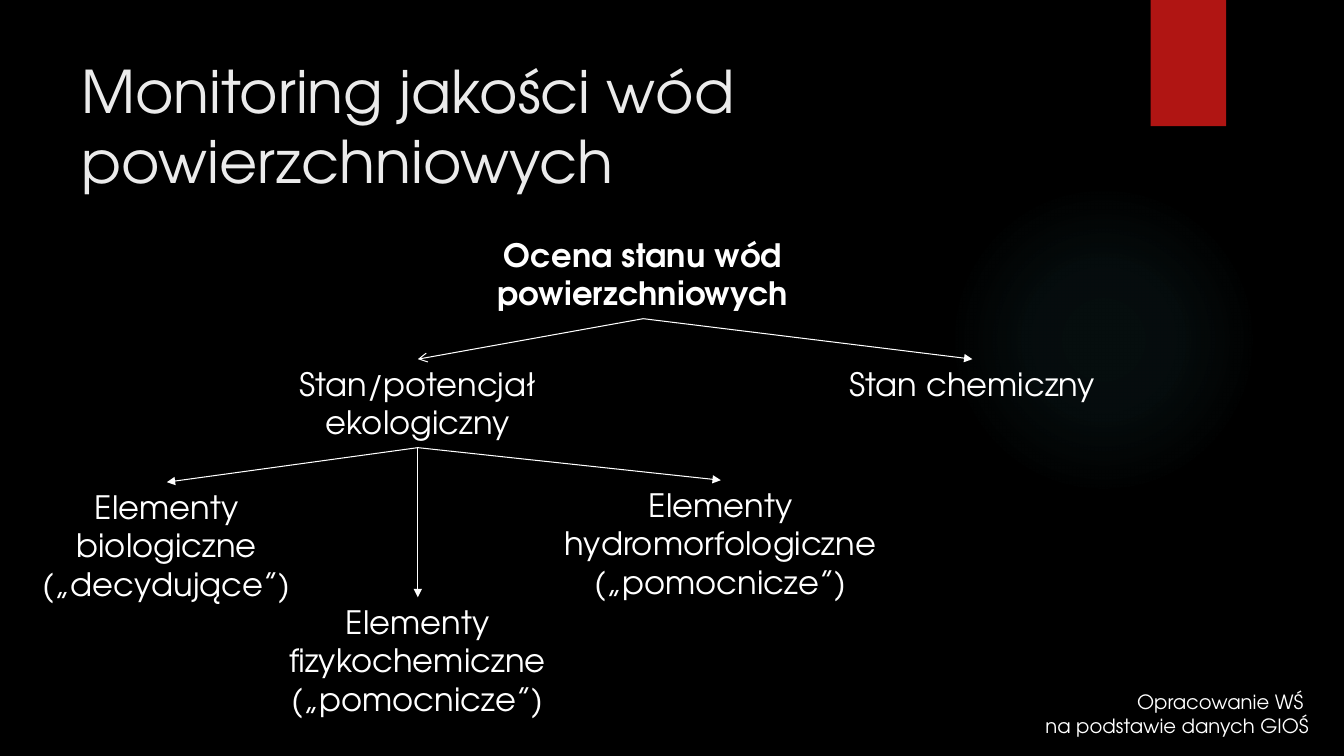
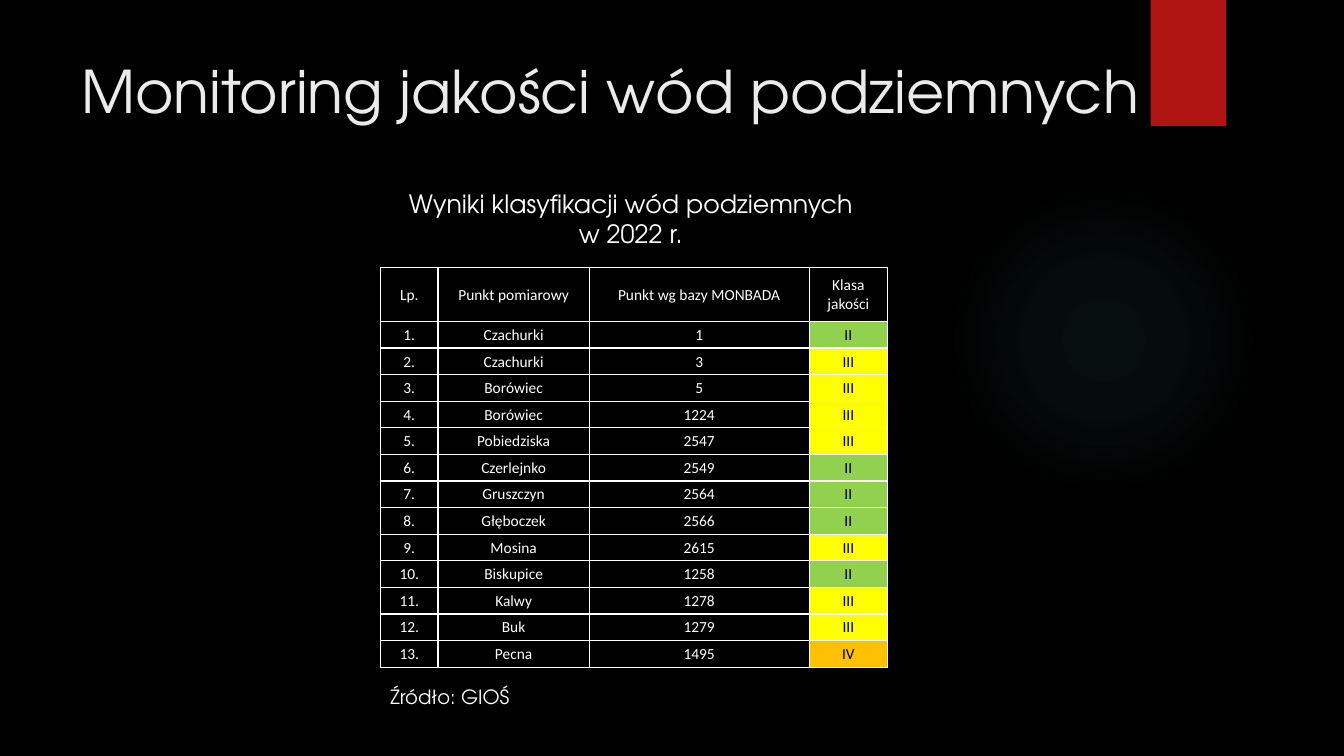
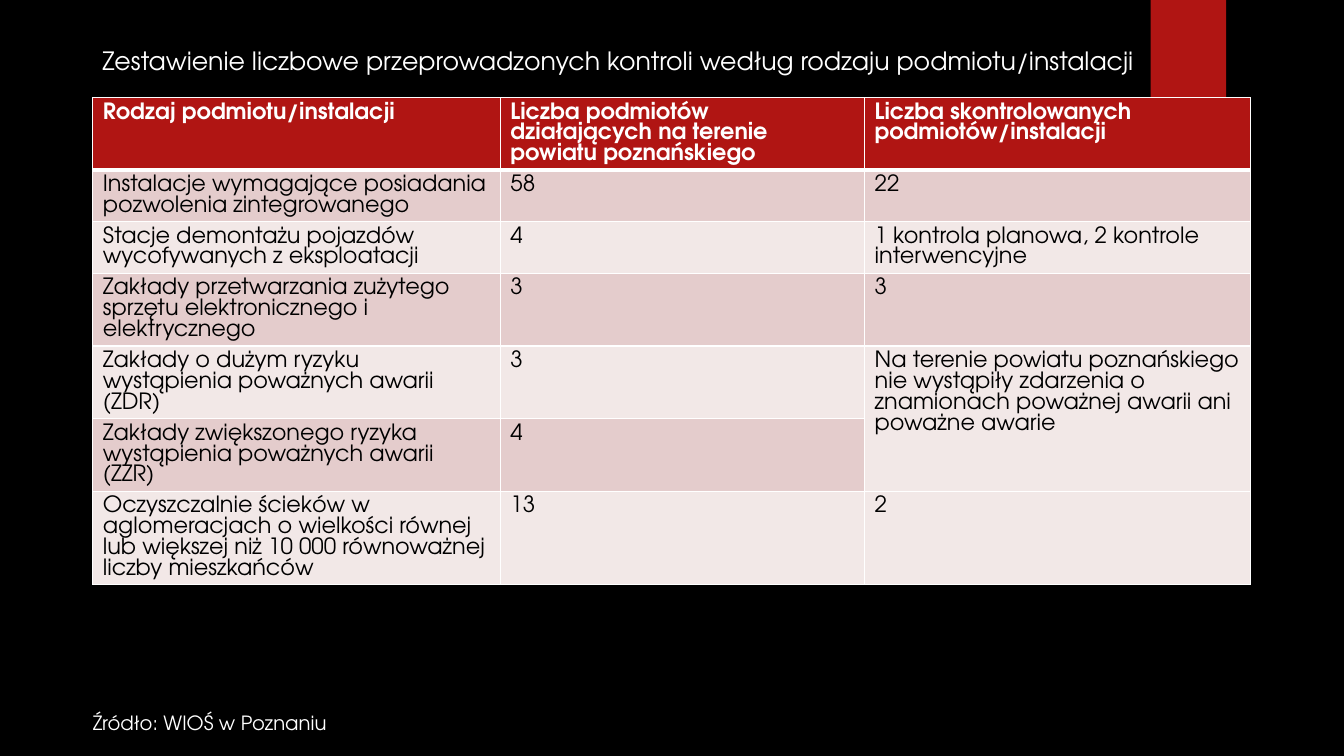
"""Build three slides on water quality monitoring and inspections."""
from dataclasses import dataclass

import pptx
import pptx.dml.color
import pptx.enum.shapes
import pptx.enum.text
import pptx.oxml
import pptx.oxml.ns
import pptx.util
from pptx.util import Cm

ALIGN = pptx.enum.text.PP_ALIGN
SHAPE = pptx.enum.shapes.MSO_SHAPE


@dataclass(frozen=True)
class Theme:
    """Colours, fonts and type sizes of the deck."""

    background: str = "000000"
    text: str = "FFFFFF"
    dark_text: str = "000000"
    title: str = "EBEBEB"
    accent: str = "B01513"
    glow: str = "50B9C1"
    bands: tuple = ("E4CCCC", "F2E8E7")
    good: str = "92D050"
    fair: str = "FFFF00"
    poor: str = "FFC000"
    font: str = "TeX Gyre Adventor"
    table_font: str = "Calibri"
    title_size: int = 42
    node_size: int = 23
    caption_size: int = 18
    table_size: int = 16
    note_size: int = 14
    small_size: int = 11


THEME = Theme()
CLASS_FILLS = {"II": THEME.good, "III": THEME.fair, "IV": THEME.poor}

GROUNDWATER_HEADER = ("Lp.", "Punkt pomiarowy", "Punkt wg bazy MONBADA", "Klasa jakości")
GROUNDWATER_POINTS = [
    ("Czachurki", "1", "II"),
    ("Czachurki", "3", "III"),
    ("Borówiec", "5", "III"),
    ("Borówiec", "1224", "III"),
    ("Pobiedziska", "2547", "III"),
    ("Czerlejnko", "2549", "II"),
    ("Gruszczyn", "2564", "II"),
    ("Głęboczek", "2566", "II"),
    ("Mosina", "2615", "III"),
    ("Biskupice", "1258", "II"),
    ("Kalwy", "1278", "III"),
    ("Buk", "1279", "III"),
    ("Pecna", "1495", "IV"),
]

INSPECTION_ROWS = [
    ("Rodzaj podmiotu/instalacji",
     "Liczba podmiotów działających na terenie powiatu poznańskiego",
     "Liczba skontrolowanych podmiotów/instalacji"),
    ("Instalacje wymagające posiadania pozwolenia zintegrowanego", "58", "22"),
    ("Stacje demontażu pojazdów wycofywanych z eksploatacji", "4",
     "1 kontrola planowa, 2 kontrole interwencyjne"),
    ("Zakłady przetwarzania zużytego sprzętu elektronicznego i elektrycznego", "3", "3"),
    ("Zakłady o dużym ryzyku wystąpienia poważnych awarii (ZDR)", "3",
     "Na terenie powiatu poznańskiego nie wystąpiły zdarzenia o znamionach "
     "poważnej awarii ani poważne awarie"),
    ("Zakłady zwiększonego ryzyka wystąpienia poważnych awarii (ZZR)", "4", ""),
    ("Oczyszczalnie ścieków w aglomeracjach o wielkości równej lub większej niż "
     "10 000 równoważnej liczby mieszkańców", "13", "2"),
]
INSPECTION_LINES = (3, 2, 2, 3, 3, 3, 4)


def rgb(colour):
    """Return a colour object for a hex string."""
    return pptx.dml.color.RGBColor.from_string(colour)


def xml(tag, body):
    """Return a drawing element with the given opening tag and content."""
    name = tag.split()[0]
    return pptx.oxml.parse_xml(f"<a:{tag} {pptx.oxml.ns.nsdecls('a')}>{body}</a:{name}>")


def style_font(font, size, colour, name=THEME.font, bold=False):
    """Set the look of a font."""
    font.name, font.size, font.bold = name, pptx.util.Pt(size), bold
    font.color.rgb = rgb(colour)


def add_plain_shape(page, kind, left, top, width, height):
    """Add a preset shape without line or shadow."""
    shape = page.shapes.add_shape(kind, Cm(left), Cm(top), Cm(width), Cm(height))
    shape.shadow.inherit = False
    shape.line.fill.background()
    return shape


def add_glow(page):
    """Add the soft round glow on the right."""
    glow = add_plain_shape(page, SHAPE.OVAL, 23.9, 4.65, 7.82, 7.82)
    stops = "".join(
        f'<a:gs pos="{place}000"><a:srgbClr val="{THEME.glow}">'
        f'<a:alpha val="{alpha}000"/></a:srgbClr></a:gs>'
        for place, alpha in ((0, 7), (36, 6), (69, 0)))
    centre = '<a:fillToRect l="50000" t="50000" r="50000" b="50000"/>'
    gradient = xml("gradFill", f'<a:gsLst>{stops}</a:gsLst><a:path path="circle">{centre}</a:path>')
    glow.element.spPr.find(pptx.oxml.ns.qn("a:prstGeom")).addnext(gradient)


def add_page(deck):
    """Add a blank page with the shared decoration."""
    page = deck.slides.add_slide(deck.slide_layouts[6])
    add_glow(page)
    ribbon = add_plain_shape(page, SHAPE.RECTANGLE, 29, 0, 1.9, 3.18)
    ribbon.fill.solid()
    ribbon.fill.fore_color.rgb = rgb(THEME.accent)
    return page


def add_text(page, text, left, top, width, height, size,
             colour=THEME.text, align=ALIGN.LEFT, bold=False):
    """Add a wrapping one-paragraph text box."""
    box = page.shapes.add_textbox(Cm(left), Cm(top), Cm(width), Cm(height))
    box.text_frame.word_wrap = True
    para = box.text_frame.paragraphs[0]
    para.text = text
    para.alignment = align
    style_font(para.font, size, colour, bold=bold)
    return box


def add_title(page, text, width):
    """Add the page title."""
    add_text(page, text, 1.8, 1.25, width, 3.89, THEME.title_size, THEME.title)


def add_node(page, text, left, top, width, lines, bold=False):
    """Add a centred label of the diagram."""
    return add_text(page, text, left, top, width, 0.27 + 0.98 * lines,
                    THEME.node_size, align=ALIGN.CENTER, bold=bold)


def add_arrow(page, parent, child, head="triangle"):
    """Join the bottom of one label to the top of another."""
    arrow = page.shapes.add_connector(pptx.enum.shapes.MSO_CONNECTOR.STRAIGHT, 0, 0, 0, 0)
    arrow.begin_connect(parent, 2)
    arrow.end_connect(child, 0)
    arrow.line.width = pptx.util.Pt(0.75)
    arrow.line.color.rgb = rgb(THEME.text)
    arrow.line._get_or_add_ln().append(xml(f'tailEnd type="{head}"', ""))
    arrow.element.spPr.append(xml("effectLst", ""))


def add_grid(page, left, top, widths, heights):
    """Add a table without banding and return it."""
    frame = page.shapes.add_table(len(heights), len(widths), Cm(left), Cm(top),
                                  Cm(sum(widths)), Cm(sum(heights)))
    table = frame.table
    table.first_row = table.horz_banding = False
    for column, width in zip(table.columns, widths):
        column.width = Cm(width)
    for row, height in zip(table.rows, heights):
        row.height = Cm(height)
    return table


def fill_cell(cell, text, size, colour, fill=None, font=THEME.font, bold=False,
              top_line=1, bottom_line=1):
    """Write a cell and set its fill and borders."""
    para = cell.text_frame.paragraphs[0]
    para.text = text
    style_font(para.font, size, colour, font, bold)
    properties = cell._tc.get_or_add_tcPr()
    for side, points in (("L", 1), ("R", 1), ("T", top_line), ("B", bottom_line)):
        properties.append(xml(
            f'ln{side} w="{pptx.util.Pt(points)}"',
            f'<a:solidFill><a:srgbClr val="{THEME.text}"/></a:solidFill>'))
    if fill:
        cell.fill.solid()
        cell.fill.fore_color.rgb = rgb(fill)
    else:
        cell.fill.background()
    return para


def build_surface_water(deck):
    """Build the page with the assessment tree."""
    page = add_page(deck)
    add_title(page, "Monitoring jakości wód powierzchniowych", 26.14)
    root = add_node(page, "Ocena stanu wód powierzchniowych", 11.51, 5.8, 9.4, 2, bold=True)
    ecological = add_node(page, "Stan/potencjał ekologiczny", 6.48, 9.05, 8.1, 2)
    chemical = add_node(page, "Stan chemiczny", 20.91, 9.05, 7.19, 1)
    biological = add_node(page, "Elementy biologiczne („decydujące”)", 0.7, 12.15, 7.01, 3)
    hydrological = add_node(page, "Elementy hydromorfologiczne („pomocnicze”)",
                            13.68, 12.1, 8.97, 3)
    physical = add_node(page, "Elementy fizykochemiczne („pomocnicze”)", 6.38, 15.05, 8.3, 3)
    add_arrow(page, root, ecological, "arrow")
    add_arrow(page, root, chemical)
    for element in (biological, physical, hydrological):
        add_arrow(page, ecological, element)
    add_text(page, "Opracowanie WŚ \vna podstawie danych GIOŚ", 25.32, 17.27, 7.92, 1.45,
             THEME.note_size, align=ALIGN.RIGHT)


def build_groundwater(deck):
    """Build the page with the groundwater classes."""
    page = add_page(deck)
    add_title(page, "Monitoring jakości wód podziemnych", 29.92)
    rows = [GROUNDWATER_HEADER]
    rows += [(f"{number}.", *point) for number, point in enumerate(GROUNDWATER_POINTS, 1)]
    heights = [1.36] + [0.67] * len(GROUNDWATER_POINTS)
    table = add_grid(page, 9.59, 6.74, (1.45, 3.81, 5.54, 1.98), heights)
    for row, texts in enumerate(rows):
        for column, text in enumerate(texts):
            cell = table.cell(row, column)
            cell.margin_left = cell.margin_right = cell.margin_top = Cm(0.02)
            cell.margin_bottom = 0
            cell.vertical_anchor = pptx.enum.text.MSO_ANCHOR.MIDDLE
            fill = CLASS_FILLS.get(text)
            colour = THEME.dark_text if fill else THEME.text
            para = fill_cell(cell, text, THEME.small_size, colour, fill, THEME.table_font)
            para.alignment = ALIGN.CENTER
    add_text(page, "Wyniki klasyfikacji wód podziemnych \vw 2022 r. ", 9.65, 4.62, 12.67, 1.8,
             THEME.caption_size, align=ALIGN.CENTER)
    add_text(page, "Źródło: GIOŚ", 9.59, 17.14, 9.4, 0.86, THEME.note_size)


def build_inspections(deck):
    """Build the page with the inspection counts."""
    page = add_page(deck)
    heights = [0.26 + 0.52 * lines for lines in INSPECTION_LINES]
    table = add_grid(page, 2.34, 2.46, (10.27, 9.18, 9.73), heights)
    table.first_row = True
    for row, texts in enumerate(INSPECTION_ROWS):
        header = row == 0
        fill = THEME.accent if header else THEME.bands[(row - 1) % 2]
        colour = THEME.text if header else THEME.dark_text
        for column, text in enumerate(texts):
            fill_cell(table.cell(row, column), text, THEME.table_size, colour, fill,
                      bold=header, top_line=3 if row == 1 else 1,
                      bottom_line=3 if header else 1)
    table.cell(4, 2).merge(table.cell(5, 2))
    add_text(page, "Źródło: WIOŚ w Poznaniu", 2.09, 17.78, 19.23, 0.86, THEME.note_size)
    add_text(page, "Zestawienie liczbowe przeprowadzonych kontroli według rodzaju "
             "podmiotu/instalacji", 2.33, 1.02, 27.91, 1.02, THEME.caption_size)


def main():
    """Build and save the deck."""
    deck = pptx.Presentation()
    deck.slide_width, deck.slide_height = Cm(33.87), Cm(19.05)
    background = deck.slide_master.background.fill
    background.solid()
    background.fore_color.rgb = rgb(THEME.background)
    build_surface_water(deck)
    build_groundwater(deck)
    build_inspections(deck)
    deck.save("out.pptx")


if __name__ == "__main__":
    main()
